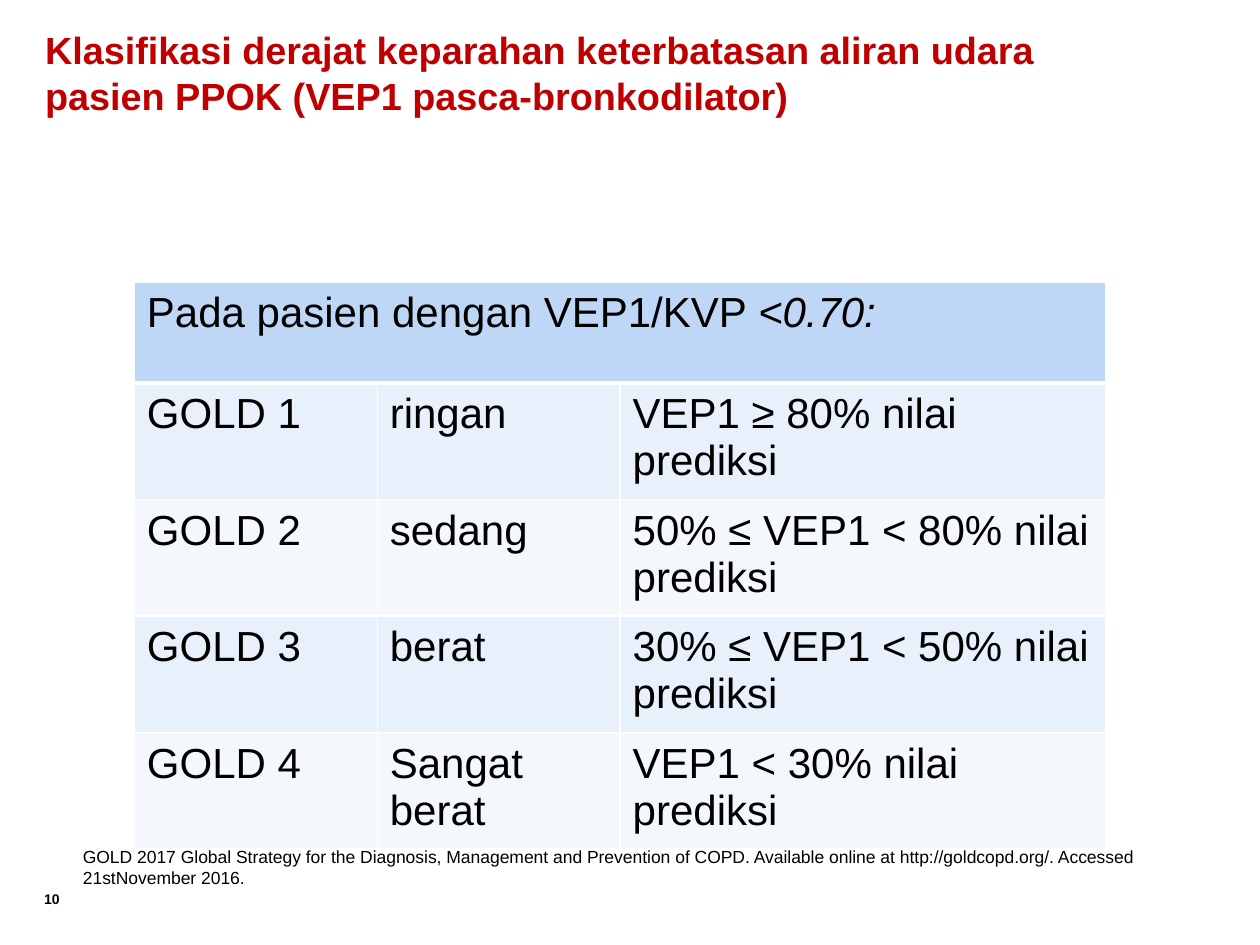
"""Build the slide on severity classes of airflow limitation in COPD patients."""
from dataclasses import dataclass

from lxml import etree
from pptx import Presentation
from pptx.dml.color import RGBColor
from pptx.enum import text
from pptx.oxml import ns
from pptx.util import Pt


@dataclass(frozen=True)
class Theme:
    font: str = "Arial"
    title: str = "C00000"
    body: str = "000000"
    header: str = "BFD7F6"
    bands: tuple = ("E8F0FB", "F4F8FD")
    border: str = "FFFFFF"
    title_size: float = 21.6
    table_size: float = 24
    note_size: float = 10
    number_size: float = 8


theme = Theme()


def add_run(paragraph, words, size, color=theme.body, bold=False, italic=False):
    run = paragraph.add_run()
    run.text = words
    run.font.name = theme.font
    run.font.size = Pt(size)
    run.font.bold = bold
    run.font.italic = italic
    run.font.color.rgb = RGBColor.from_string(color)


def style_cell(cell, color, bottom_width=1):
    cell.margin_left = cell.margin_right = Pt(7.2)
    cell.margin_top = cell.margin_bottom = Pt(4.5)
    cell.fill.solid()
    cell.fill.fore_color.rgb = RGBColor.from_string(color)
    properties = cell._tc.get_or_add_tcPr()
    for position, side in enumerate(("lnL", "lnR", "lnT", "lnB")):
        width = bottom_width if side == "lnB" else 1
        line = etree.Element(ns.qn(f"a:{side}"), w=str(Pt(width)))
        fill = etree.SubElement(line, ns.qn("a:solidFill"))
        etree.SubElement(fill, ns.qn("a:srgbClr"), val=theme.border)
        properties.insert(position, line)


presentation = Presentation()
presentation.slide_width = Pt(720)
presentation.slide_height = Pt(540)
slide = presentation.slides.add_slide(presentation.slide_layouts[6])

title = slide.shapes.add_textbox(Pt(18.7), Pt(15.1), Pt(652.3), Pt(52.6)).text_frame
title.word_wrap = True
title.vertical_anchor = text.MSO_ANCHOR.MIDDLE
add_run(
    title.paragraphs[0],
    "Klasifikasi derajat keparahan keterbatasan aliran udara pasien PPOK (VEP1 pasca-bronkodilator)",
    theme.title_size, theme.title, bold=True,
)

number = slide.shapes.add_textbox(Pt(25.2), Pt(509), Pt(31), Pt(17.3)).text_frame
number.word_wrap = True
number.margin_left = number.margin_top = number.margin_right = number.margin_bottom = 0
add_run(number.paragraphs[0], "10", theme.number_size, bold=True)

severity_rows = [
    ("GOLD 1", "ringan", "VEP1 ≥ 80% nilai prediksi"),
    ("GOLD 2", "sedang", "50% ≤ VEP1 < 80% nilai prediksi"),
    ("GOLD 3", "berat", "30% ≤ VEP1 < 50% nilai prediksi"),
    ("GOLD 4", "Sangat berat", "VEP1 < 30% nilai prediksi"),
]
column_widths = (138.8, 138.8, 277.6)
row_heights = (57.6, 63, 63, 63, 63)
table = slide.shapes.add_table(
    len(row_heights), len(column_widths),
    Pt(76.8), Pt(161.2), Pt(sum(column_widths)), Pt(sum(row_heights)),
).table
for column, width in zip(table.columns, column_widths):
    column.width = Pt(width)
for row, height in zip(table.rows, row_heights):
    row.height = Pt(height)

for cell in table.rows[0].cells:
    style_cell(cell, theme.header, bottom_width=3)
heading = table.cell(0, 0)
heading.merge(table.cell(0, 2))
paragraph = heading.text_frame.paragraphs[0]
add_run(paragraph, "Pada pasien dengan VEP1/KVP ", theme.table_size)
add_run(paragraph, "<0.70:", theme.table_size, italic=True)

for row_index, values in enumerate(severity_rows, start=1):
    for column_index, value in enumerate(values):
        cell = table.cell(row_index, column_index)
        style_cell(cell, theme.bands[(row_index - 1) % 2])
        add_run(cell.text_frame.paragraphs[0], value, theme.table_size)

source = slide.shapes.add_textbox(Pt(40.3), Pt(468), Pt(645.1), Pt(43.9)).text_frame
source.word_wrap = True
source.margin_top = Pt(15.2)
add_run(
    source.paragraphs[0],
    "GOLD 2017 Global Strategy for the Diagnosis, Management and Prevention of COPD. "
    "Available online at http://goldcopd.org/. Accessed 21stNovember 2016.",
    theme.note_size,
)

presentation.save("out.pptx")
